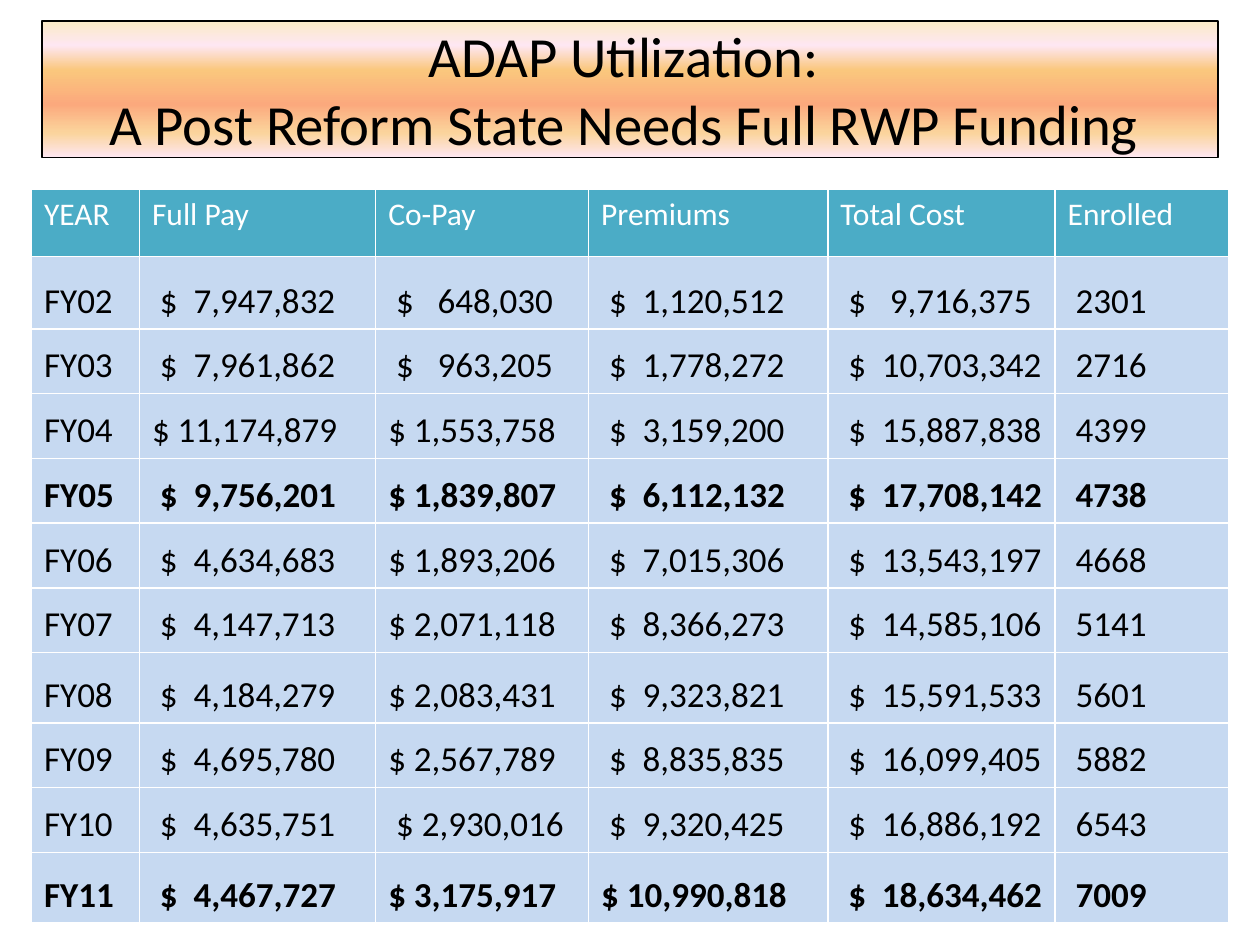
"""Build the ADAP utilization slide: a gradient title above a cost table."""
from dataclasses import dataclass

from lxml import etree
from pptx import Presentation
from pptx.dml.color import RGBColor
from pptx.enum.text import MSO_ANCHOR, MSO_AUTO_SIZE, PP_ALIGN
from pptx.oxml.ns import qn
from pptx.util import Pt

TOP, MIDDLE, BOTTOM = MSO_ANCHOR.TOP, MSO_ANCHOR.MIDDLE, MSO_ANCHOR.BOTTOM
CENTER = PP_ALIGN.CENTER
NO_AUTOFIT = MSO_AUTO_SIZE.NONE
FONT = "Calibri"
COLORS = {"text": "000000", "header_text": "FFFFFF", "header": "4BACC6", "body": "C6D9F1"}
TITLE = "ADAP Utilization: \vA Post Reform State Needs Full RWP Funding "
TITLE_STOPS = [(0, "FBEAC7"), (18, "FEE7F2"), (36, "FAC77D"),
               (61, "FBA97D"), (82, "FBD49C"), (100, "FEE7F2")]
HEADERS = ("YEAR", "Full Pay", "Co-Pay", "Premiums", "Total Cost", "Enrolled")
COLUMN_WIDTHS = (61.7, 135, 121.7, 136.7, 129.9, 99)
HEADER_HEIGHT = 38.6
ROW_HEIGHT = 37


@dataclass
class YearRow:
    """One fiscal year of the table."""
    cells: tuple[str, ...]
    height: float = ROW_HEIGHT
    bold: bool = False


YEARS = [
    YearRow(("FY02", " $  7,947,832", " $   648,030", " $  1,120,512", " $   9,716,375", " 2301"), 41.4),
    YearRow(("FY03", " $  7,961,862", " $   963,205", " $  1,778,272", " $  10,703,342", " 2716")),
    YearRow(("FY04", "$ 11,174,879", "$ 1,553,758", " $  3,159,200", " $  15,887,838", " 4399")),
    YearRow(("FY05", " $  9,756,201", "$ 1,839,807", " $  6,112,132", " $  17,708,142", " 4738"), bold=True),
    YearRow(("FY06", " $  4,634,683", "$ 1,893,206", " $  7,015,306", " $  13,543,197", " 4668")),
    YearRow(("FY07", " $  4,147,713", "$ 2,071,118", " $  8,366,273", " $  14,585,106", " 5141")),
    YearRow(("FY08", " $  4,184,279", "$ 2,083,431", " $  9,323,821", " $  15,591,533", " 5601"), 40.2),
    YearRow(("FY09", " $  4,695,780", "$ 2,567,789", " $  8,835,835", " $  16,099,405", " 5882")),
    YearRow(("FY10", " $  4,635,751", " $ 2,930,016", " $  9,320,425", " $  16,886,192", " 6543")),
    YearRow(("FY11", " $  4,467,727", "$ 3,175,917", "$ 10,990,818", " $  18,634,462", " 7009"), 40.2, True),
]


def rgb(name: str) -> RGBColor:
    """Look up a named colour."""
    return RGBColor.from_string(COLORS[name])


def format_runs(tf, size: float, color: str, bold: bool = False) -> None:
    """Apply one font to every run of a text frame."""
    for p in tf.paragraphs:
        for r in p.runs:
            r.font.name, r.font.size, r.font.bold = FONT, Pt(size), bold
            r.font.color.rgb = rgb(color)


def fill_gradient(sp, stops: list[tuple[int, str]]) -> None:
    """Fill a shape with a top-to-bottom gradient."""
    sp.fill.gradient()
    grad = sp.fill._xPr.find(qn("a:gradFill"))
    for child in list(grad):
        grad.remove(child)
    stop_list = etree.SubElement(grad, qn("a:gsLst"))
    for position, color in stops:
        stop = etree.SubElement(stop_list, qn("a:gs"), pos=str(position * 1000))
        etree.SubElement(stop, qn("a:srgbClr"), val=color)
    etree.SubElement(grad, qn("a:lin"), ang="5400000", scaled="0")


def draw_title(s) -> None:
    """Place and format the title placeholder."""
    sp = s.shapes.title
    sp.left, sp.top, sp.width, sp.height = Pt(24), Pt(12), Pt(672), Pt(78)
    fill_gradient(sp, TITLE_STOPS)
    sp.line.color.rgb = rgb("text")
    sp.line.width = Pt(0.75)
    tf = sp.text_frame
    tf.text = TITLE
    tf.word_wrap = True
    tf.auto_size = NO_AUTOFIT
    tf.vertical_anchor = MIDDLE
    tf.paragraphs[0].alignment = CENTER
    format_runs(tf, 32.4, "text")


def draw_row(row, texts: tuple[str, ...], height: float, size: float, fill: str,
             color: str, anchor: MSO_ANCHOR, bold: bool = False) -> None:
    """Fill one table row."""
    row.height = Pt(height)
    for cell, text in zip(row.cells, texts):
        cell.text_frame.text = text
        cell.vertical_anchor = anchor
        cell.fill.solid()
        cell.fill.fore_color.rgb = rgb(fill)
        format_runs(cell.text_frame, size, color, bold)


def draw_table(s) -> None:
    """Add the cost table with its header and yearly rows."""
    height = HEADER_HEIGHT + sum(year.height for year in YEARS)
    table = s.shapes.add_table(len(YEARS) + 1, len(HEADERS), Pt(18), Pt(108),
                               Pt(sum(COLUMN_WIDTHS)), Pt(height)).table
    table.horz_banding = False
    for column, width in zip(table.columns, COLUMN_WIDTHS):
        column.width = Pt(width)
    rows = list(table.rows)
    draw_row(rows[0], HEADERS, HEADER_HEIGHT, 18, "header", "header_text", TOP)
    for row, year in zip(rows[1:], YEARS):
        draw_row(row, year.cells, year.height, 20, "body", "text", BOTTOM, year.bold)


def main() -> None:
    """Build and save the presentation."""
    prs = Presentation()
    prs.slide_width, prs.slide_height = Pt(720), Pt(540)
    s = prs.slides.add_slide(prs.slide_layouts[5])
    draw_title(s)
    draw_table(s)
    prs.save("out.pptx")


if __name__ == "__main__":
    main()
